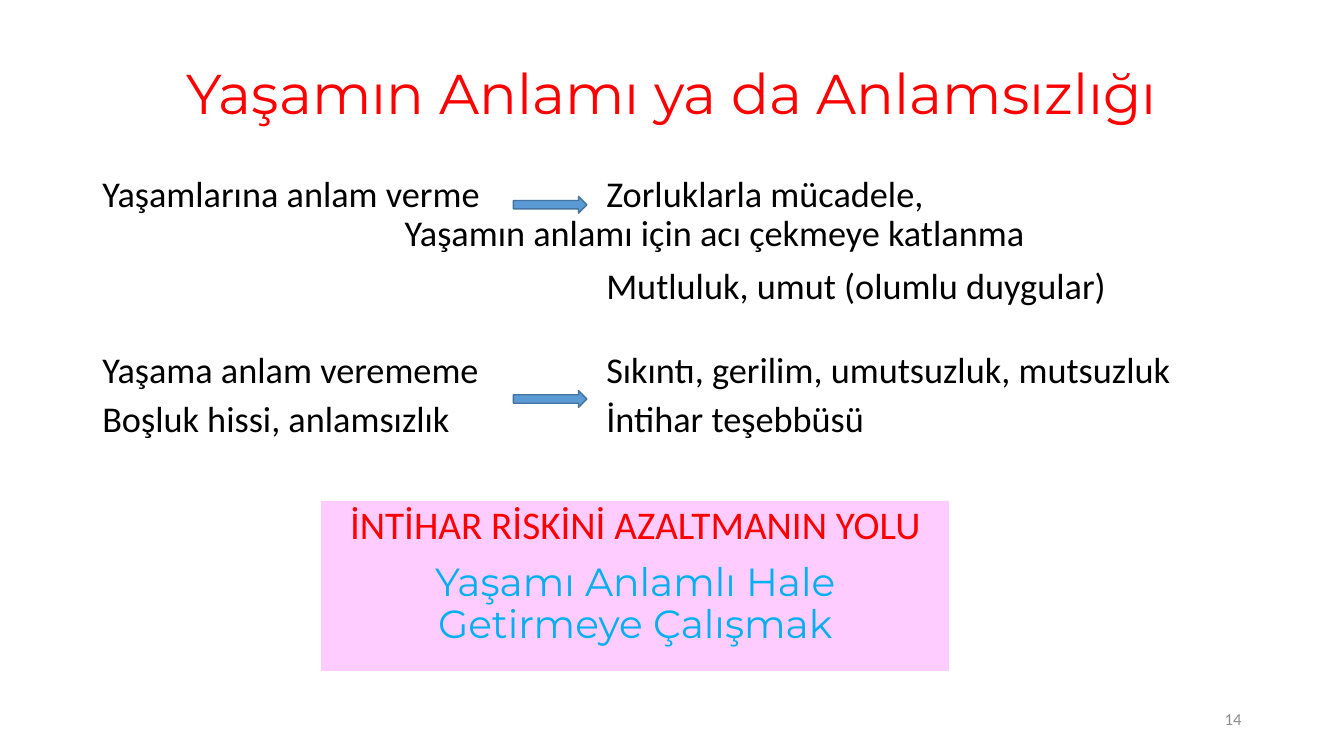
from lxml.etree import SubElement
from pptx import Presentation
from pptx.dml.color import RGBColor
from pptx.enum.shapes import MSO_SHAPE as Shape
from pptx.enum.text import MSO_ANCHOR as Anchor, PP_ALIGN as Align
from pptx.oxml.ns import qn
from pptx.util import Pt

PX = 9525
RED = RGBColor(0xFF, 0x00, 0x00)
BLACK = RGBColor(0x00, 0x00, 0x00)
GRAY = RGBColor(0x8C, 0x8C, 0x8C)
SKY = RGBColor(0x00, 0xB0, 0xF0)
BLUE = RGBColor(0x5B, 0x9B, 0xD5)
NAVY = RGBColor(0x43, 0x73, 0x9E)
PINK = RGBColor(0xFF, 0xCC, 0xFF)
BODY, HEAD = "Calibri", "Montserrat"
STOPS = (288, 480)


def emu(*sizes):
    return [size * PX for size in sizes]


def style(para, size, color, face=BODY, align=Align.LEFT, line=0.9, gap=0):
    para.alignment = align
    para.line_spacing = line
    para.space_before = Pt(gap)
    font = para.font
    font.size, font.name = Pt(size), face
    font.color.rgb = color


def add_stops(para):
    """Set the tab stops that align the right-hand column."""
    props = para.font._element.getparent()
    tabs = SubElement(props, qn("a:tabLst"))
    props.insert(props.index(para.font._element), tabs)
    for stop in STOPS:
        SubElement(tabs, qn("a:tab"), pos=str(stop * PX), algn="l")


def add_label(slide, box, text, size, color, face, align):
    frame = slide.shapes.add_textbox(*emu(*box)).text_frame
    frame.word_wrap = True
    frame.vertical_anchor = Anchor.MIDDLE
    para = frame.paragraphs[0]
    para.text = text
    style(para, size, color, face, align)


def add_arrow(slide, left, top):
    arrow = slide.shapes.add_shape(Shape.RIGHT_ARROW, *emu(left, top, 70, 16))
    arrow.shadow.inherit = False
    arrow.fill.solid()
    arrow.fill.fore_color.rgb = BLUE
    arrow.line.color.rgb = NAVY
    arrow.line.width = Pt(1)


def add_effect(slide, box, lines, line, drop):
    """Write causes and effects in two columns with an arrow between them."""
    left, top = box[:2]
    frame = slide.shapes.add_textbox(*emu(*box)).text_frame
    frame.word_wrap = True
    frame.text = "\n".join(lines)
    for para in frame.paragraphs:
        style(para, 25.9, BLACK, line=line, gap=10)
        add_stops(para)
    add_arrow(slide, left + 401, top + drop)


def add_advice(slide, box):
    panel = slide.shapes.add_shape(Shape.RECTANGLE, *emu(*box))
    panel.shadow.inherit = False
    panel.fill.solid()
    panel.fill.fore_color.rgb = PINK
    panel.line.fill.background()
    frame = panel.text_frame
    frame.word_wrap = True
    frame.vertical_anchor = Anchor.TOP
    frame.text = ("İNTİHAR RİSKİNİ AZALTMANIN YOLU\n"
                  "Yaşamı Anlamlı Hale Getirmeye Çalışmak")
    looks = ((RED, BODY), (SKY, HEAD))
    for para, (color, face) in zip(frame.paragraphs, looks):
        style(para, 28, color, face, Align.CENTER, gap=10)


def main():
    deck = Presentation()
    deck.slide_width, deck.slide_height = emu(1280, 720)
    slide = deck.slides.add_slide(deck.slide_layouts[6])
    add_label(slide, (88, 38, 1104, 107), "Yaşamın Anlamı ya da Anlamsızlığı",
              40, RED, HEAD, Align.CENTER)
    add_effect(slide, (88, 163, 1104, 139), (
        "Yaşamlarına anlam verme\tZorluklarla mücadele,"
        "\v\tYaşamın anlamı için acı çekmeye katlanma",
        "\t\tMutluluk, umut (olumlu duygular)"), 0.9, 24)
    add_effect(slide, (88, 334, 1104, 93), (
        "Yaşama anlam verememe\tSıkıntı, gerilim, umutsuzluk, mutsuzluk",
        "Boşluk hissi, anlamsızlık\tİntihar teşebbüsü"), 0.8, 38)
    add_advice(slide, (306, 477, 598, 162))
    add_label(slide, (904, 667, 288, 38), "14", 12, GRAY, BODY, Align.RIGHT)
    deck.save("out.pptx")


if __name__ == "__main__":
    main()
